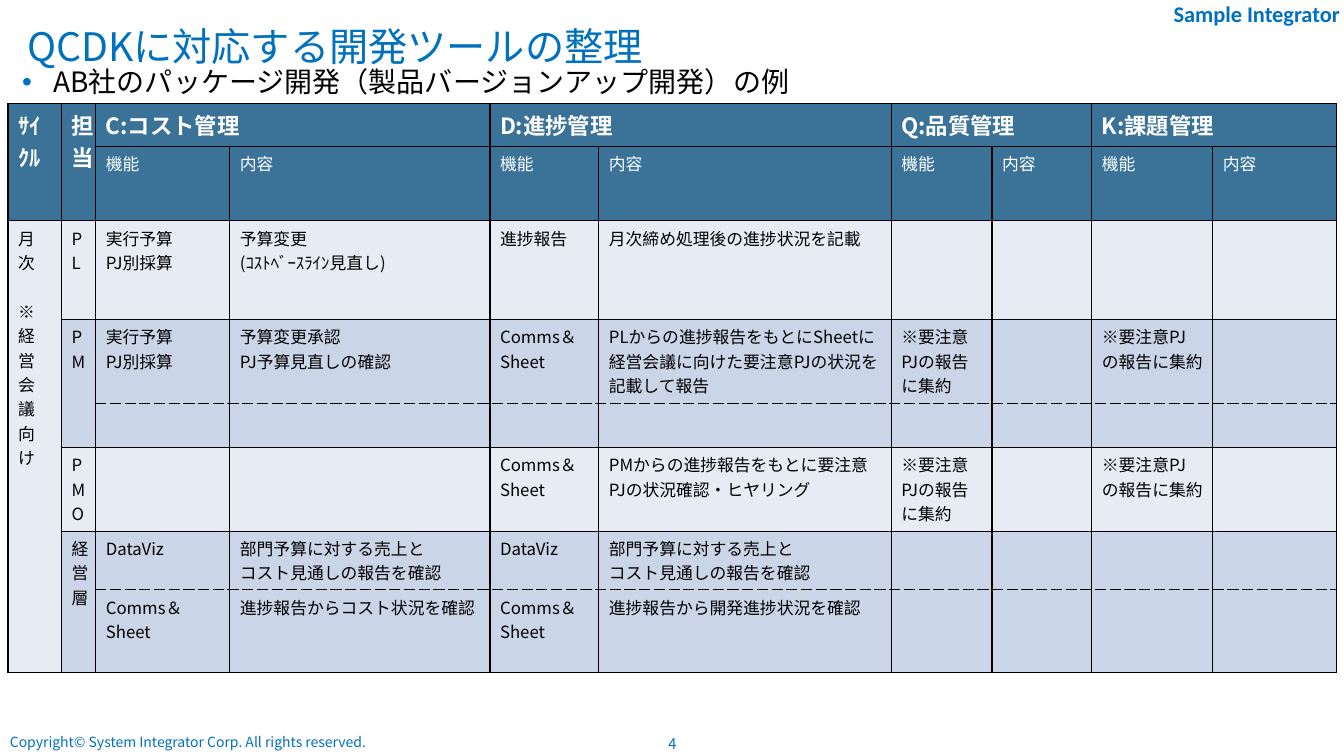
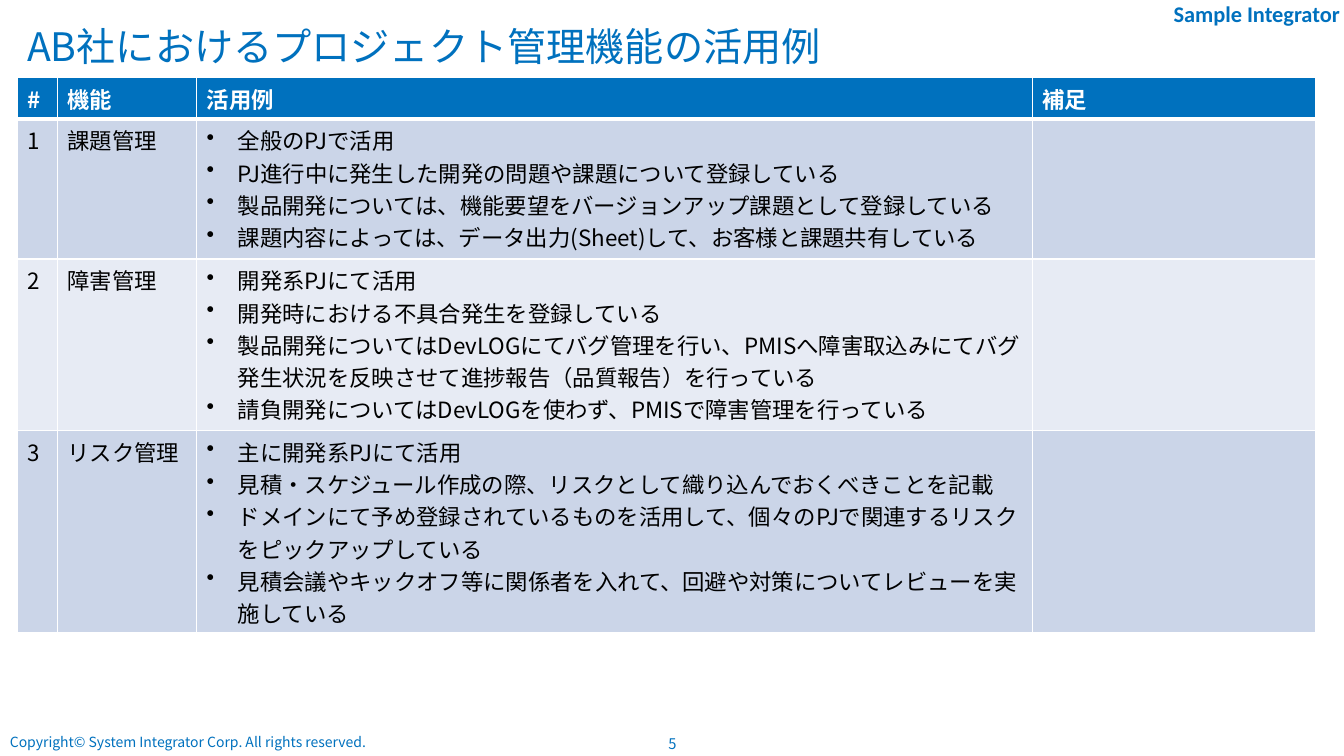
from lxml.etree import SubElement
from pptx import Presentation
from pptx.dml.color import RGBColor as RGB
from pptx.enum.text import MSO_ANCHOR as Anchor, MSO_AUTO_SIZE as Auto, PP_ALIGN as Align
from pptx.oxml.ns import qn
from pptx.util import Inches, Pt

HUES = {"blue": "0071BE", "head": "3A7298", "pale": "E7EBF4", "mid": "CBD5E8",
        "black": "000000", "white": "FFFFFF"}
FONT = "Noto Sans CJK JP"
BRAND = "Sample Integrator"
RIGHTS = "Copyright© System Integrator Corp. All rights reserved."

# Slide 1 table: a list in a cell holds its paragraphs
TEAM = "Comms＆Sheet"
NOTE = "※要注意PJの報告に集約"
COST = ["実行予算", "PJ別採算"]
CYCLE = [
    ["ｻｲｸﾙ", "担当", "C:コスト管理", "", "D:進捗管理", "", "Q:品質管理", "", "K:課題管理", ""],
    ["", ""] + ["機能", "内容"] * 4,
    [["月次", "※経営会議向け"], "PL", COST, ["予算変更", "(ｺｽﾄﾍﾞｰｽﾗｲﾝ見直し)"],
     "進捗報告", "月次締め処理後の進捗状況を記載", "", "", "", ""],
    ["", "PM", COST, ["予算変更承認", "PJ予算見直しの確認"], TEAM,
     "PLからの進捗報告をもとにSheetに経営会議に向けた要注意PJの状況を記載して報告",
     NOTE, "", NOTE, ""],
    [""] * 10,
    ["", "PMO", "", "", TEAM, "PMからの進捗報告をもとに要注意PJの状況確認・ヒヤリング",
     NOTE, "", NOTE, ""],
    ["", "経営層"] + ["DataViz", ["部門予算に対する売上と", "コスト見通しの報告を確認"]] * 2
    + [""] * 4,
    ["", "", TEAM, "進捗報告からコスト状況を確認", TEAM, "進捗報告から開発進捗状況を確認",
     "", "", "", ""],
]
SPANS = [(0, 0, 1, 0), (0, 1, 1, 1), (2, 0, 7, 0), (3, 1, 4, 1), (6, 1, 7, 1)]
SPANS += [(0, col, 0, col + 1) for col in range(2, 10, 2)]
TONES = ["head", "head", "pale", "mid", "mid", "pale", "mid", "mid"]

# Slide 2 table
USES = [
    ["#", "機能", "活用例", "補足"],
    ["1", "課題管理", [
        "全般のPJで活用",
        "PJ進行中に発生した開発の問題や課題について登録している",
        "製品開発については、機能要望をバージョンアップ課題として登録している",
        "課題内容によっては、データ出力(Sheet)して、お客様と課題共有している"], ""],
    ["2", "障害管理", [
        "開発系PJにて活用",
        "開発時における不具合発生を登録している",
        "製品開発についてはDevLOGにてバグ管理を行い、PMISへ障害取込みにて"
        "バグ発生状況を反映させて進捗報告（品質報告）を行っている",
        "請負開発についてはDevLOGを使わず、PMISで障害管理を行っている"], ""],
    ["3", "リスク管理", [
        "主に開発系PJにて活用",
        "見積・スケジュール作成の際、リスクとして織り込んでおくべきことを記載",
        "ドメインにて予め登録されているものを活用して、個々のPJで関連するリスクを"
        "ピックアップしている",
        "見積会議やキックオフ等に関係者を入れて、回避や対策についてレビューを"
        "実施している"], ""],
]


def style(para, size, hue, bold=False, font=FONT):
    for run in para.runs:
        run.font.size, run.font.bold, run.font.name = Pt(size), bold, font
        run.font.color.rgb = RGB.from_string(HUES[hue])
        SubElement(run._r.get_or_add_rPr(), qn("a:ea"), typeface=font)


def bullet(para, hue):
    props = para._p.get_or_add_pPr()
    props.set("marL", str(Inches(0.31)))
    props.set("indent", str(-Inches(0.31)))
    tint = SubElement(props, qn("a:buClr"))
    SubElement(tint, qn("a:srgbClr"), val=HUES[hue])
    SubElement(props, qn("a:buChar"), char="•")


def place(shape, box):
    shape.left, shape.top, shape.width, shape.height = map(Inches, box)


def label(slide, box, text, size, align=Align.LEFT, **look):
    frame = slide.shapes.add_textbox(*map(Inches, box)).text_frame
    frame.word_wrap = True
    frame.text = text
    frame.paragraphs[0].alignment = align
    style(frame.paragraphs[0], size, "blue", **look)
    return frame


def holder(shape, box, text, size, hue, anchor):
    place(shape, box)
    frame = shape.text_frame
    frame.text = text
    frame.auto_size, frame.vertical_anchor = Auto.NONE, anchor
    para = frame.paragraphs[0]
    para.alignment, para.space_before = Align.LEFT, Pt(0)
    style(para, size, hue)
    return para


def base(deck, layout, title, page):
    """Add a slide with the shared title, brand and footer."""
    slide = deck.slides.add_slide(deck.slide_layouts[layout])
    holder(slide.shapes.title, (0.17, 0.28, 12.99, 0.35), title, 28, "blue", Anchor.MIDDLE)
    label(slide, (0, 7.23, 6.14, 0.27), RIGHTS, 10)
    label(slide, (6.42, 7.24, 0.5, 0.28), str(page), 10.5, Align.CENTER)
    mark = label(slide, (11.12, 0, 2.21, 0.31), BRAND, 16, Align.RIGHT,
                 bold=True, font="Calibri")
    mark.margin_left = mark.margin_top = mark.margin_bottom = 0
    mark.margin_right = Inches(0.04)
    return slide


def edge(cell, side, hue, width=1, dash="solid"):
    line = SubElement(cell._tc.get_or_add_tcPr(), qn("a:ln" + side), w=str(Pt(width)))
    fill = SubElement(line, qn("a:solidFill"))
    SubElement(fill, qn("a:srgbClr"), val=HUES[hue])
    SubElement(line, qn("a:prstDash"), val=dash)


def paint(cell, hue):
    cell.fill.solid()
    cell.fill.fore_color.rgb = RGB.from_string(HUES[hue])


def write(cell, text):
    """Fill a cell and return its paragraphs."""
    cell.text = "\n".join(text) if isinstance(text, list) else text
    return cell.text_frame.paragraphs


def grid(slide, left, top, cols, rows):
    frame = slide.shapes.add_table(len(rows), len(cols), Inches(left), Inches(top),
                                   Inches(sum(cols)), Inches(sum(rows)))
    table = frame.table
    table.first_row = table.horz_banding = False
    for part, size in zip([*table.columns], cols):
        part.width = Inches(size)
    for part, size in zip([*table.rows], rows):
        part.height = Inches(size)
    return table


def cycle(slide, left, top):
    """Tools by cycle and role, with dashed rules inside a role."""
    table = grid(slide, left, top,
                 [0.53, 0.34, 1.33, 2.58, 1.08, 2.9, 1, 0.99, 1.2, 1.23],
                 [0.42, 0.74, 0.98, 0.83, 0.44, 0.83, 0.58, 0.82])
    for r, row in enumerate(CYCLE):
        for c, text in enumerate(row):
            cell = table.cell(r, c)
            dashed = {"T": r in (4, 7), "B": r in (3, 6)}
            for side in "LRTB":
                dash = c > 1 and dashed.get(side)
                edge(cell, side, "black", dash="sysDash" if dash else "solid")
            paint(cell, "pale" if c == 0 and r > 1 else TONES[r])
            top_row = r == 0
            for para in write(cell, text):
                style(para, 16 if top_row else 12, "white" if r < 2 else "black", top_row)
    table.cell(2, 0).text_frame.paragraphs[1].space_before = Pt(17.5)
    for r, c, down, over in SPANS:
        table.cell(r, c).merge(table.cell(down, over))


def uses(slide, left, top):
    """Examples of use, one row a function."""
    table = grid(slide, left, top, [0.4, 1.38, 8.29, 2.81], [0.41, 1.39, 1.7, 2.01])
    for r, row in enumerate(USES):
        head = r == 0
        for c, text in enumerate(row):
            cell = table.cell(r, c)
            for side in "LRTB":
                thick = (r, side) in ((0, "B"), (1, "T"))
                edge(cell, side, "white", 3 if thick else 1)
            paint(cell, "blue" if head else "mid" if r % 2 else "pale")
            for para in write(cell, text):
                if isinstance(text, list):
                    bullet(para, "black")
                style(para, 16, "white" if head else "black", head)


def main():
    deck = Presentation()
    deck.slide_width, deck.slide_height = Inches(13.33), Inches(7.5)

    # Slide 1: tools
    slide = base(deck, 1, "QCDKに対応する開発ツールの整理", 4)
    lead = holder(slide.placeholders[1], (0.12, 0.63, 12.99, 0.4),
                  "AB社のパッケージ開発（製品バージョンアップ開発）の例", 20, "black", Anchor.TOP)
    lead.line_spacing = 0.9
    bullet(lead, "blue")
    cycle(slide, 0.08, 1.03)

    # Slide 2: examples
    slide = base(deck, 5, "AB社におけるプロジェクト管理機能の活用例", 5)
    uses(slide, 0.17, 0.77)

    deck.save("out.pptx")


if __name__ == "__main__":
    main()
